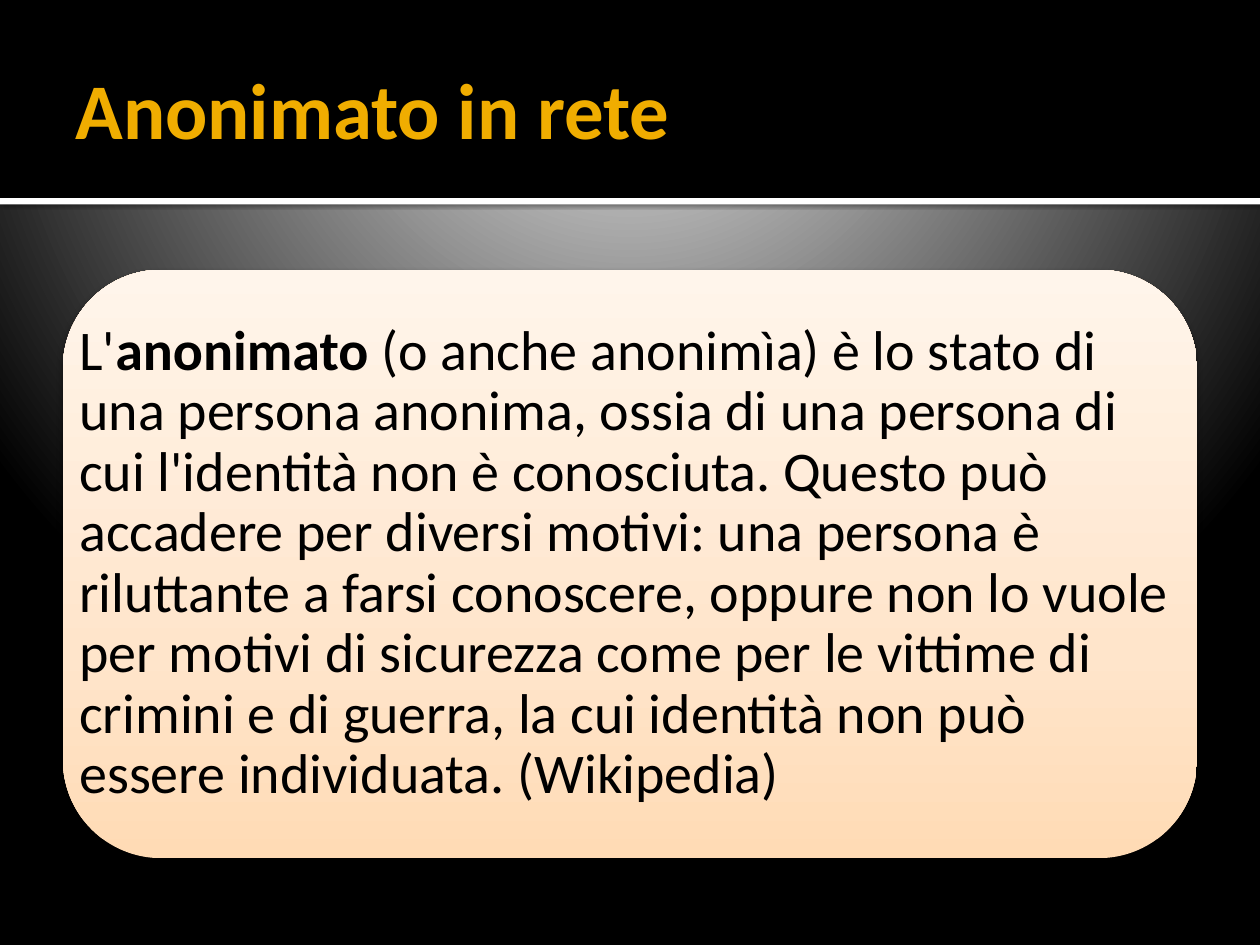
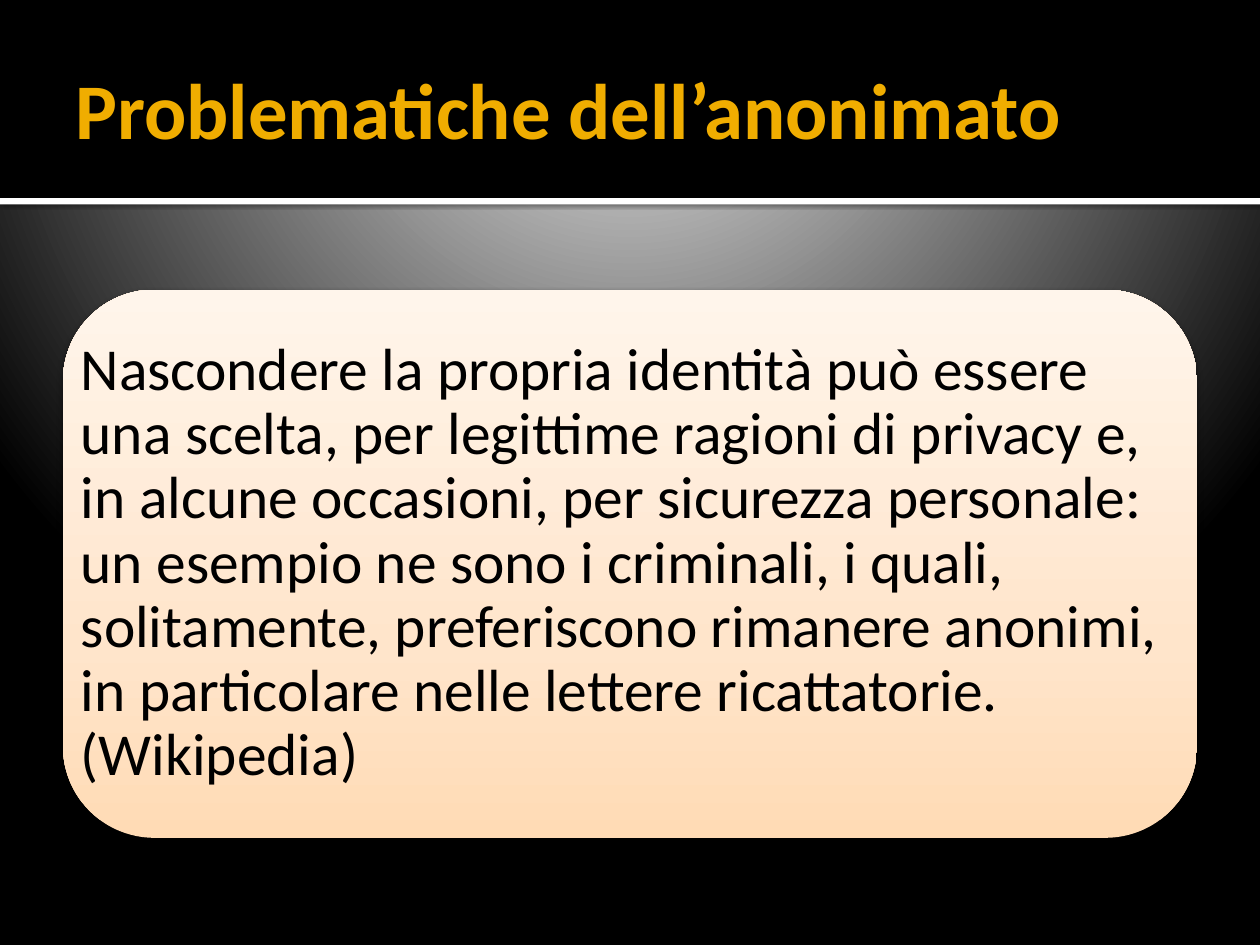
from dataclasses import dataclass

from lxml import etree
from pptx import Presentation
from pptx import util as u
from pptx.dml.color import RGBColor
from pptx.enum import shapes, text
from pptx.oxml.ns import qn

FONT = "Calibri"
HUES = {"gold": "F0AD00", "black": "000000", "white": "FFFFFF"}
GLOW = [(0, "C0C0C0"), (12, "C0C0C0"), (20, "BEBEBE"), (100, "000000")]
PEACH = [(0, "FFDBB5"), (35, "FFE5CB"), (100, "FFF5EB")]
WIDE, HIGH = 25.4, 19.05
BAND, RULE = 3.99, 0.13
EDGE = 1.27


@dataclass
class Shade:
    alpha: int
    blur: float
    dist: float


@dataclass
class Page:
    title: str
    quote: list[tuple[str, bool]]
    size: int
    top: float
    tall: float
    inset: float


PAGES = [
    Page(
        "Anonimato in rete",
        [
            ("L'", False),
            ("anonimato", True),
            (
                " (o anche anonimìa) è lo stato di una persona anonima, ossia di una "
                "persona di cui l'identità non è conosciuta. Questo può accadere per "
                "diversi motivi: una persona è riluttante a farsi conoscere, oppure "
                "non lo vuole per motivi di sicurezza come per le vittime di crimini "
                "e di guerra, la cui identità non può essere individuata. (Wikipedia)",
                False,
            ),
        ],
        32, 5.44, 11.86, 0.33,
    ),
    Page(
        "Problematiche dell’anonimato",
        [
            (
                "Nascondere la propria identità può essere una scelta, per legittime "
                "ragioni di privacy e, in alcune occasioni, per sicurezza personale: "
                "un esempio ne sono i criminali, i quali, solitamente, preferiscono "
                "rimanere anonimi, in particolare nelle lettere ricattatorie. "
                "(Wikipedia)",
                False,
            ),
        ],
        34, 5.84, 11.05, 0.36,
    ),
]


def blend(owner, fill, stops: list[tuple[int, str]]):
    fill.gradient()
    grad = next(owner._element.iter(qn("a:gradFill")))
    for child in list(grad):
        grad.remove(child)
    group = etree.SubElement(grad, qn("a:gsLst"))
    for place, hue in stops:
        stop = etree.SubElement(group, qn("a:gs"), pos=str(place * 1000))
        etree.SubElement(stop, qn("a:srgbClr"), val=hue)
    return grad


def glow(master) -> None:
    grad = blend(master, master.background.fill, GLOW)
    ring = etree.SubElement(grad, qn("a:path"), {"path": "circle"})
    etree.SubElement(ring, qn("a:fillToRect"),
                     l="10000", t="-25000", r="10000", b="125000")


def shade(shape, look: Shade) -> None:
    outer = etree.SubElement(
        shape._element.spPr.find(qn("a:effectLst")), qn("a:outerShdw"),
        blurRad=str(u.Pt(look.blur)), dist=str(u.Pt(look.dist)),
        dir="5400000", algn="t", rotWithShape="0")
    hue = etree.SubElement(outer, qn("a:srgbClr"), val=HUES["black"])
    etree.SubElement(hue, qn("a:alpha"), val=str(look.alpha * 1000))


def block(slide, kind, left: float, top: float, wide: float, tall: float):
    shape = slide.shapes.add_shape(kind, u.Cm(left), u.Cm(top), u.Cm(wide), u.Cm(tall))
    shape.shadow.inherit = False
    shape.line.fill.background()
    return shape


def bands(slide) -> None:
    rect = shapes.MSO_SHAPE.RECTANGLE
    rule = block(slide, rect, 0, BAND, WIDE, RULE)
    shade(rule, Shade(60, 2.5, 0.8))
    head = block(slide, rect, 0, 0, WIDE, BAND)
    for layer, (shape, hue) in enumerate([(rule, "white"), (head, "black")]):
        shape.fill.solid()
        shape.fill.fore_color.rgb = RGBColor.from_string(HUES[hue])
        slide.shapes._spTree.insert(2 + layer, shape._element)


def frame(shape, insets: tuple[float, float, float, float]):
    body = shape.text_frame
    body.word_wrap = True
    body.auto_size = text.MSO_AUTO_SIZE.NONE
    body.vertical_anchor = text.MSO_ANCHOR.MIDDLE
    (body.margin_left, body.margin_top,
     body.margin_right, body.margin_bottom) = map(u.Cm, insets)
    return body


def style(run, size: int, hue: str, bold: bool) -> None:
    run.font.name = FONT
    run.font.size = u.Pt(size)
    run.font.bold = bold
    run.font.color.rgb = RGBColor.from_string(HUES[hue])


def title(slide, words: str) -> None:
    shape = slide.shapes.title
    shape.left, shape.top = u.Cm(EDGE), u.Cm(0.43)
    shape.width, shape.height = u.Cm(WIDE - 2 * EDGE), u.Cm(3.48)
    body = frame(shape, (0.25, 0.13, 0.13, 0.13))
    body.text = words
    para = body.paragraphs[0]
    para.alignment = text.PP_ALIGN.LEFT
    style(para.runs[0], 45, "gold", True)


def card(slide, page: Page) -> None:
    area = (EDGE, page.top, WIDE - 2 * EDGE, page.tall)
    panel = block(slide, shapes.MSO_SHAPE.ROUNDED_RECTANGLE, *area)
    grad = blend(panel, panel.fill, PEACH)
    etree.SubElement(grad, qn("a:lin"), ang="16200000", scaled="1")
    shade(panel, Shade(38, 3.5, 2))
    box = slide.shapes.add_textbox(*map(u.Cm, area))
    para = frame(box, (page.inset,) * 4).paragraphs[0]
    para.alignment = text.PP_ALIGN.LEFT
    para.line_spacing = 0.9
    for words, bold in page.quote:
        run = para.add_run()
        run.text = words
        style(run, page.size, "black", bold)


def main() -> None:
    deck = Presentation()
    deck.slide_width, deck.slide_height = u.Cm(WIDE), u.Cm(HIGH)
    glow(deck.slide_master)
    for page in PAGES:
        slide = deck.slides.add_slide(deck.slide_layouts[5])
        bands(slide)
        title(slide, page.title)
        card(slide, page)
    deck.save("out.pptx")


if __name__ == "__main__":
    main()
